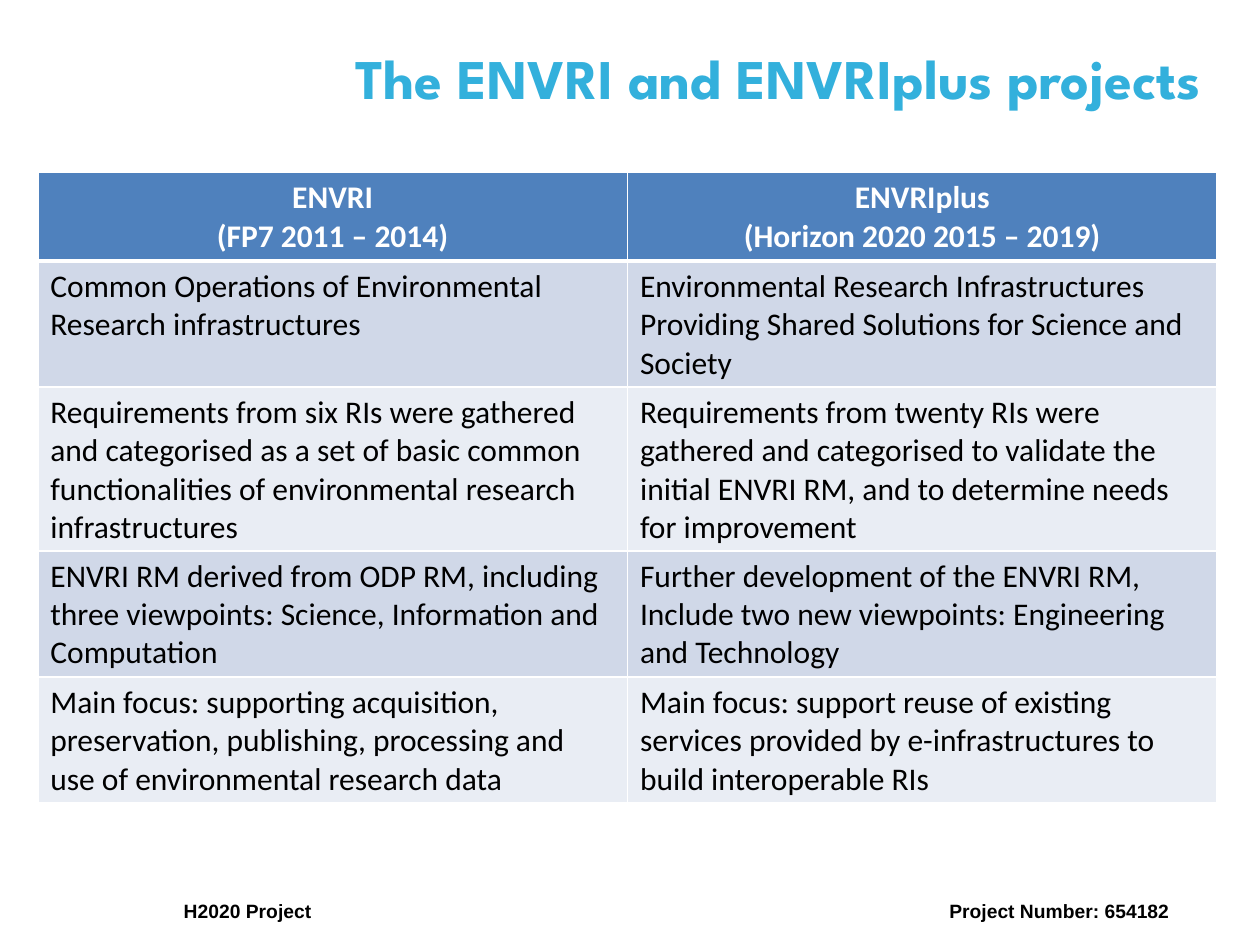
from lxml.etree import SubElement
from pptx import Presentation
from pptx.dml.color import RGBColor
from pptx.enum.text import MSO_ANCHOR, PP_ALIGN
from pptx.oxml.ns import qn
from pptx.util import Inches, Pt

ROWS = [
    (["ENVRI", "(FP7 2011 – 2014)"],
     ["ENVRIplus", "(Horizon 2020 2015 – 2019)"]),
    (["Common Operations of Environmental Research infrastructures"],
     ["Environmental Research Infrastructures Providing Shared Solutions "
      "for Science and Society"]),
    (["Requirements from six RIs were gathered and categorised as a set of "
      "basic common functionalities of environmental research infrastructures"],
     ["Requirements from twenty RIs were gathered and categorised to validate "
      "the initial ENVRI RM, and to determine needs for improvement"]),
    (["ENVRI RM derived from ODP RM, including three viewpoints: Science, "
      "Information and Computation"],
     ["Further development of the ENVRI RM,",
      "Include two new viewpoints: Engineering and Technology"]),
    (["Main focus: supporting acquisition, preservation, publishing, "
      "processing and use of environmental research data"],
     ["Main focus: support reuse of existing services provided by "
      "e-infrastructures to build interoperable RIs"]),
]


def color(code):
    """Turn a hex string into a colour."""
    return RGBColor.from_string(code)


def write(frame, lines, font, size, ink, bold, align):
    """Fill a text frame with one paragraph per line."""
    for i, line in enumerate(lines):
        para = frame.add_paragraph() if i else frame.paragraphs[0]
        para.alignment = align
        run = para.add_run()
        run.text = line
        run.font.name = font
        run.font.size = Pt(size)
        run.font.bold = bold
        run.font.color.rgb = color(ink)


def add_title(slide, text):
    """Place and format the title placeholder."""
    title = slide.shapes.title
    title.left, title.top = Inches(2.72), Inches(0.11)
    title.width, title.height = Inches(7.01), Inches(1.01)
    frame = title.text_frame
    frame.vertical_anchor = MSO_ANCHOR.MIDDLE
    write(frame, [text], "League Spartan", 32, "33B0DC", True, PP_ALIGN.LEFT)


def add_label(slide, text, left, width, align):
    """Add a bold label at the foot of the slide."""
    box = slide.shapes.add_textbox(
        Inches(left), Inches(7.09), Inches(width), Inches(0.29))
    box.text_frame.word_wrap = True
    write(box.text_frame, [text], "Arial", 11, "000000", True, align)


def add_edges(cell, top, base):
    """Draw white borders round a cell."""
    props = cell._tc.get_or_add_tcPr()
    for side, width in zip("LRTB", (1, 1, top, base)):
        line = SubElement(props, qn("a:ln" + side), w=str(Pt(width)))
        fill = SubElement(line, qn("a:solidFill"))
        SubElement(fill, qn("a:srgbClr"), val="FFFFFF")


def add_grid(slide):
    """Add the table that compares the two projects."""
    grid = slide.shapes.add_table(
        len(ROWS), 2, Inches(0.3), Inches(1.37),
        Inches(9.36), Inches(0.41 * len(ROWS))).table
    for r, row in enumerate(ROWS):
        head = r == 0
        shade = "4F81BD" if head else "D0D8E8" if r % 2 else "E9EDF4"
        ink = "FFFFFF" if head else "000000"
        align = PP_ALIGN.CENTER if head else PP_ALIGN.LEFT
        for c, lines in enumerate(row):
            cell = grid.cell(r, c)
            add_edges(cell, 3 if r == 1 else 1, 3 if head else 1)
            cell.fill.solid()
            cell.fill.fore_color.rgb = color(shade)
            write(cell.text_frame, lines, "Calibri", 18, ink, head, align)


def main():
    """Build the slide and save it."""
    deck = Presentation()
    deck.slide_width, deck.slide_height = Inches(10), Inches(7.5)
    slide = deck.slides.add_slide(deck.slide_layouts[5])
    add_label(slide, "H2020 Project", 1.36, 1.36, PP_ALIGN.LEFT)
    add_label(slide, "Project Number: 654182", 7.41, 1.97, PP_ALIGN.RIGHT)
    add_grid(slide)
    add_title(slide, "The ENVRI and ENVRIplus projects")
    deck.save("out.pptx")


if __name__ == "__main__":
    main()
